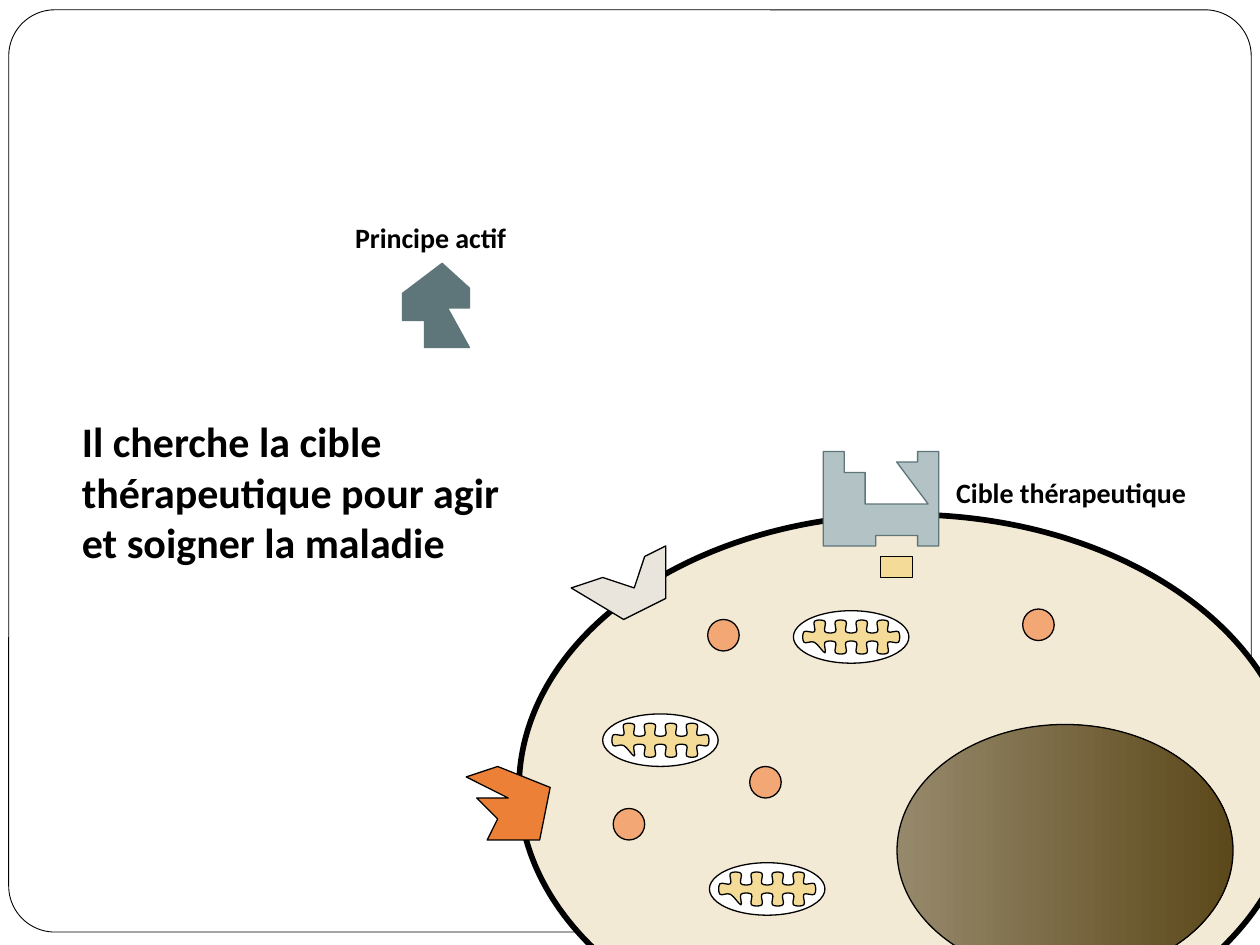
from dataclasses import dataclass
from typing import Optional

from lxml import etree
from pptx import Presentation
from pptx.dml.color import RGBColor
from pptx.enum import shapes as kinds, text as txt
from pptx.oxml import ns
from pptx.util import Pt

BLACK, WHITE = "000000", "FFFFFF"
SLATE, PALE_SLATE, SAND = "5E767A", "B3C2C5", "F4DC98"
FONT = "Calibri"
GRID = 6  # points between neighbouring nodes of a mitochondrion's folds
Point = tuple[float, float]


@dataclass
class Style:
    fill: str
    line: str = BLACK
    weight: float = 0.75


@dataclass
class Box:
    left: float
    top: float
    width: float
    height: float

    def lengths(self):
        return Pt(self.left), Pt(self.top), Pt(self.width), Pt(self.height)


@dataclass
class Outline:
    points: list[Point]
    style: Style


def rgb(color: str) -> RGBColor:
    return RGBColor.from_string(color)


def apply_style(shape, style: Style):
    shape.shadow.inherit = False
    shape.fill.solid()
    shape.fill.fore_color.rgb = rgb(style.fill)
    shape.line.color.rgb = rgb(style.line)
    shape.line.width = Pt(style.weight)
    return shape


def draw_preset(slide, kind, box: Box, style: Style):
    return apply_style(slide.shapes.add_shape(kind, *box.lengths()), style)


def draw_outline(slide, outline: Outline):
    start, *rest = [(Pt(x), Pt(y)) for x, y in outline.points]
    builder = slide.shapes.build_freeform(*start, scale=1.0)
    builder.add_line_segments([*rest, start], close=True)
    return apply_style(builder.convert_to_shape(), outline.style)


def round_corners(shape):
    """Turn the straight sides of a closed outline into Catmull-Rom curves."""
    sides = list(shape._element.iter(ns.qn("a:lnTo")))
    ends = [(int(side[0].get("x")), int(side[0].get("y"))) for side in sides]
    count = len(ends)
    for i, side in enumerate(sides):
        a, b, c, d = (ends[(i + k) % count] for k in (-2, -1, 0, 1))
        leave = [q + (r - p) / 6 for p, q, r in zip(a, b, c)]
        arrive = [r - (s - q) / 6 for q, r, s in zip(b, c, d)]
        curve = etree.Element(ns.qn("a:cubicBezTo"))
        for x, y in (leave, arrive, c):
            etree.SubElement(curve, ns.qn("a:pt"), x=str(round(x)), y=str(round(y)))
        side.getparent().replace(side, curve)


def write(shape, words: str, size: float, wrap: bool,
          fit: Optional[txt.MSO_AUTO_SIZE] = None):
    frame = shape.text_frame
    frame.text = words
    frame.word_wrap = wrap
    frame.auto_size = fit or txt.MSO_AUTO_SIZE.SHAPE_TO_FIT_TEXT
    frame.vertical_anchor = txt.MSO_ANCHOR.TOP
    paragraph = frame.paragraphs[0]
    paragraph.alignment = txt.PP_ALIGN.LEFT
    font = paragraph.runs[0].font
    font.name, font.size, font.bold = FONT, Pt(size), True
    font.color.rgb = rgb(BLACK)


def draw_label(slide, words: str, box: Box):
    write(slide.shapes.add_textbox(*box.lengths()), words, 16, wrap=False)


def fold_nodes() -> list[Point]:
    """Four bumps above and four below, on a grid of unit cells."""
    bumps = (1, 3, 5, 7)
    top = [(x + dx, y) for x in bumps
           for dx, y in ((0, 0), (0, -1), (1, -1), (1, 0))]
    bottom = [(x + dx, y) for x in reversed(bumps)
              for dx, y in ((1, 1), (1, 2), (0, 2), (0, 1))]
    bottom.remove((1, 2))  # the last bump ends in a point
    return [(0, 1), (0, 0), *top, (9, 0), (9, 1), *bottom]


def draw_mitochondrion(slide, left: float, top: float):
    draw_preset(slide, kinds.MSO_SHAPE.OVAL, Box(left, top, 66, 30), Style(WHITE))
    folds = [(left + GRID * (x + 1), top + GRID * (y + 2)) for x, y in fold_nodes()]
    round_corners(draw_outline(slide, Outline(folds, Style(SAND))))


# Parts of the scene, in points
ACTIVE_INGREDIENT = Outline(
    [(252.7, 150.5), (230.1, 167.6), (230.1, 183.2), (242.6, 183.2),
     (242.6, 198.7), (268.3, 198.7), (255.8, 176), (268.3, 176),
     (268.3, 164.7)], Style(SLATE, SLATE))
RECEPTORS = [
    Outline([(326.4, 336), (356.4, 354), (380.4, 342), (380.4, 312),
             (368.4, 318), (362.4, 336), (344.4, 330)], Style("E9E5DC")),
    Outline([(284.4, 438), (314.4, 450), (308.4, 480), (278.4, 480),
             (284.4, 468), (272.4, 456), (290.4, 456), (266.4, 444)],
            Style("EC8036")),
]
TARGET = Outline(
    [(524.4, 258), (524.4, 264), (512.4, 264), (530.4, 288), (494.4, 288),
     (494.4, 270), (482.4, 270), (482.4, 258), (470.4, 258), (470.4, 312),
     (500.4, 312), (500.4, 306), (524.4, 306), (524.4, 312), (536.4, 312),
     (536.4, 258)], Style(PALE_SLATE, SLATE))
MITOCHONDRIA = [(344.4, 408), (405.4, 493), (453.4, 349)]
VESICLES = [(404.4, 354), (350.4, 462), (428.4, 438), (584.4, 348)]


def main():
    deck = Presentation()
    deck.slide_width, deck.slide_height = Pt(720), Pt(540)
    slide = deck.slides.add_slide(deck.slide_layouts[5])
    oval = kinds.MSO_SHAPE.OVAL

    # Message
    message = slide.shapes.title
    message.left, message.top, message.width, message.height = Box(
        39.6, 234, 257.8, 94.3).lengths()
    write(message, "Il cherche la cible thérapeutique pour agir et soigner la maladie",
          24, wrap=True, fit=txt.MSO_AUTO_SIZE.NONE)

    # Rounded frame, behind the message
    frame = draw_preset(slide, kinds.MSO_SHAPE.ROUNDED_RECTANGLE,
                        Box(5, 5.6, 710, 527), Style(WHITE, weight=0.5))
    frame.adjustments[0] = 0.05
    message._element.addprevious(frame._element)

    # Active ingredient
    draw_label(slide, "Principe actif", Box(195.8, 122.4, 102.2, 26.6))
    draw_outline(slide, ACTIVE_INGREDIENT)

    # Cell and its nucleus
    draw_preset(slide, oval, Box(296.6, 294, 444, 312), Style("F3EAD5", weight=3.25))
    nucleus = draw_preset(slide, oval, Box(512.6, 414, 192, 144), Style("96896B"))
    nucleus.fill.gradient()
    nucleus.fill.gradient_angle = 0
    for stop, color in zip(nucleus.fill.gradient_stops, ("96896B", "5C481A")):
        stop.color.rgb = rgb(color)

    # Organelles
    for left, top in MITOCHONDRIA:
        draw_mitochondrion(slide, left, top)
    for left, top in VESICLES:
        draw_preset(slide, oval, Box(left, top, 18, 18), Style("F2A774"))

    # Receptors on the membrane
    for receptor in RECEPTORS:
        draw_outline(slide, receptor)

    # Therapeutic target and the messenger below it
    draw_label(slide, "Cible thérapeutique", Box(539.3, 268.2, 147.6, 26.6))
    draw_outline(slide, TARGET)
    draw_preset(slide, kinds.MSO_SHAPE.RECTANGLE, Box(503.3, 318, 18, 12), Style(SAND))

    deck.save("out.pptx")


if __name__ == "__main__":
    main()
